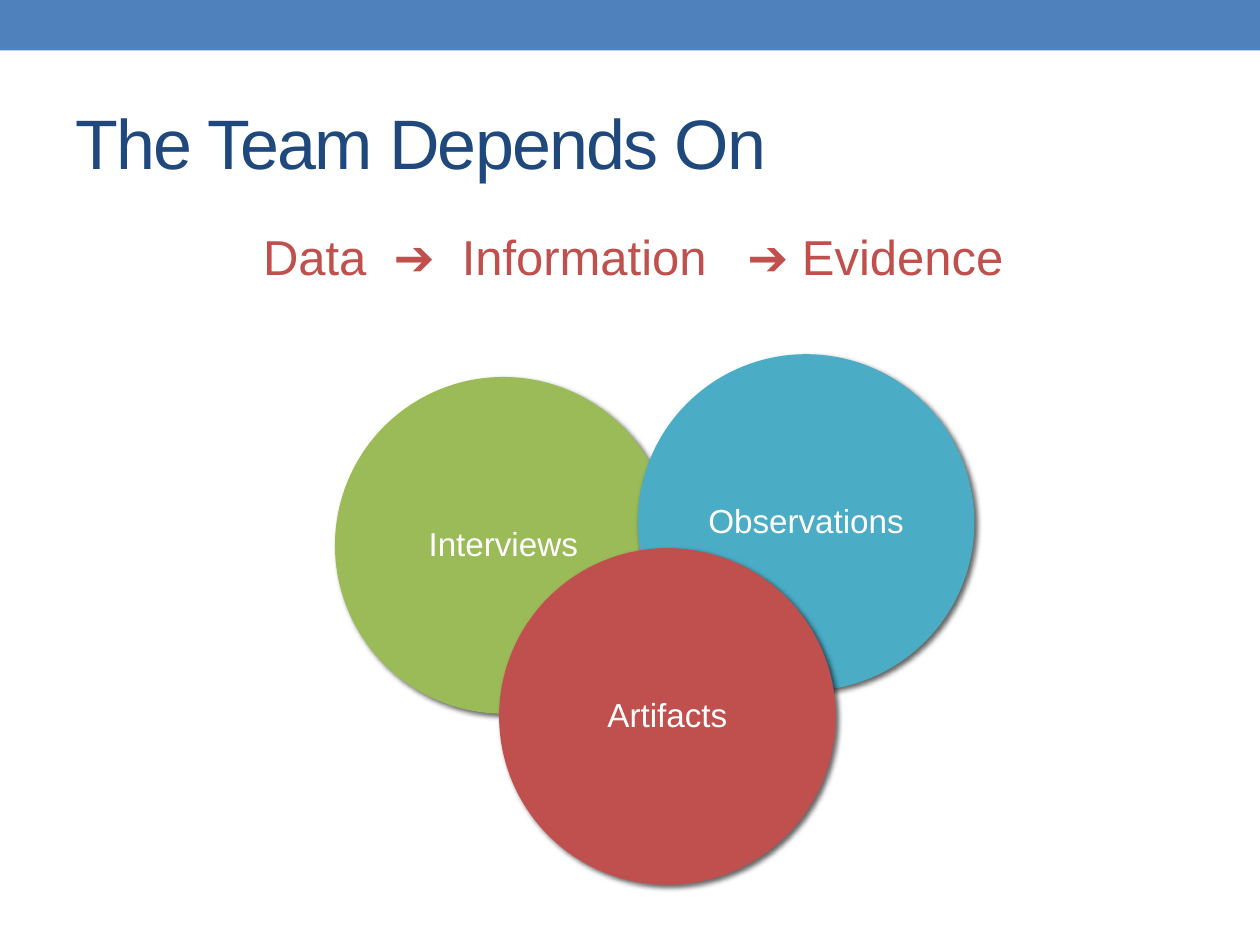
from lxml.etree import SubElement
from pptx import Presentation
from pptx.dml.color import RGBColor
from pptx.enum.shapes import MSO_SHAPE
from pptx.enum.text import MSO_ANCHOR, MSO_AUTO_SIZE, PP_ALIGN
from pptx.oxml import parse_xml
from pptx.oxml.ns import nsdecls, qn
from pptx.util import Pt

COLORS = {"band": "4F81BD", "title": "1F497D", "red": "C0504D",
          "green": "9BBB59", "teal": "4BACC6", "white": "FFFFFF"}
FONT = "Arial"

TITLE = "The Team Depends On"
# Text and extra letter spacing in points, which widens the gaps at the arrows
CHAIN = [("Data", 0), (" ", 7.8), ("➔", 0), (" ", 7.8), ("Information", 0),
         (" ", 15.6), ("➔ Evidence", 0)]
# Label, colour, left, top
CIRCLES = [("Interviews", "green", 191.4, 215.4),
           ("Observations", "teal", 364.4, 202.4),
           ("Artifacts", "red", 285.2, 313.2)]
DIAMETER = 192.4


def write(box, spans, size, color, align=PP_ALIGN.LEFT, anchor=MSO_ANCHOR.MIDDLE,
          before=0, line=1.0):
    """Fill a box with one paragraph of (text, letter spacing) spans."""
    frame = box.text_frame
    frame.word_wrap = True
    frame.auto_size = MSO_AUTO_SIZE.NONE
    frame.vertical_anchor = anchor
    para = frame.paragraphs[0]
    para.alignment = align
    para.space_before = Pt(before)
    para.line_spacing = line
    for text, spacing in spans:
        span = para.add_run()
        span.text = text
        span.font.name = FONT
        span.font.size = Pt(size)
        span.font.color.rgb = RGBColor.from_string(COLORS[color])
        if spacing:
            span.font._element.set("spc", str(round(spacing * 100)))
    return para


def place(box, left, top, width, height):
    box.left, box.top, box.width, box.height = map(Pt, (left, top, width, height))


def add_filled(page, kind, color, left, top, width, height):
    shape = page.shapes.add_shape(kind, *map(Pt, (left, top, width, height)))
    shape.shadow.inherit = False
    shape.fill.solid()
    shape.fill.fore_color.rgb = RGBColor.from_string(COLORS[color])
    shape.line.fill.background()
    return shape


def add_shadow(shape):
    effects = shape._element.spPr.find(qn("a:effectLst"))
    effects.append(parse_xml(
        f'<a:outerShdw {nsdecls("a")} blurRad="{Pt(3)}" dist="{Pt(2)}" '
        f'dir="{45 * 60000}" algn="ctr" rotWithShape="0">'
        '<a:srgbClr val="000000"><a:alpha val="60000"/></a:srgbClr></a:outerShdw>'))


def main():
    deck = Presentation()
    deck.slide_width, deck.slide_height = Pt(720), Pt(540)
    page = deck.slides.add_slide(deck.slide_layouts[1])
    title, body = page.placeholders

    # Top band
    add_filled(page, MSO_SHAPE.RECTANGLE, "band", 0, 0, 720, 28.8)

    # Title
    place(title, 36, 41.8, 648, 77.8)
    write(title, [(TITLE, -1)], 40, "title")

    # Chain from data to evidence
    place(body, 36, 126, 648, 383.8)
    para = write(body, CHAIN, 28, "red", align=PP_ALIGN.CENTER,
                 anchor=MSO_ANCHOR.TOP, before=5.6)
    settings = para._p.get_or_add_pPr()
    settings.set("marL", str(Pt(3.6)))
    settings.set("indent", "0")
    SubElement(settings, qn("a:buNone"))

    # Overlapping circles
    for label, color, left, top in CIRCLES:
        circle = add_filled(page, MSO_SHAPE.OVAL, color, left, top, DIAMETER, DIAMETER)
        add_shadow(circle)
        write(circle, [(label, 0)], 19, "white", align=PP_ALIGN.CENTER, line=0.9)

    deck.save("out.pptx")


if __name__ == "__main__":
    main()
